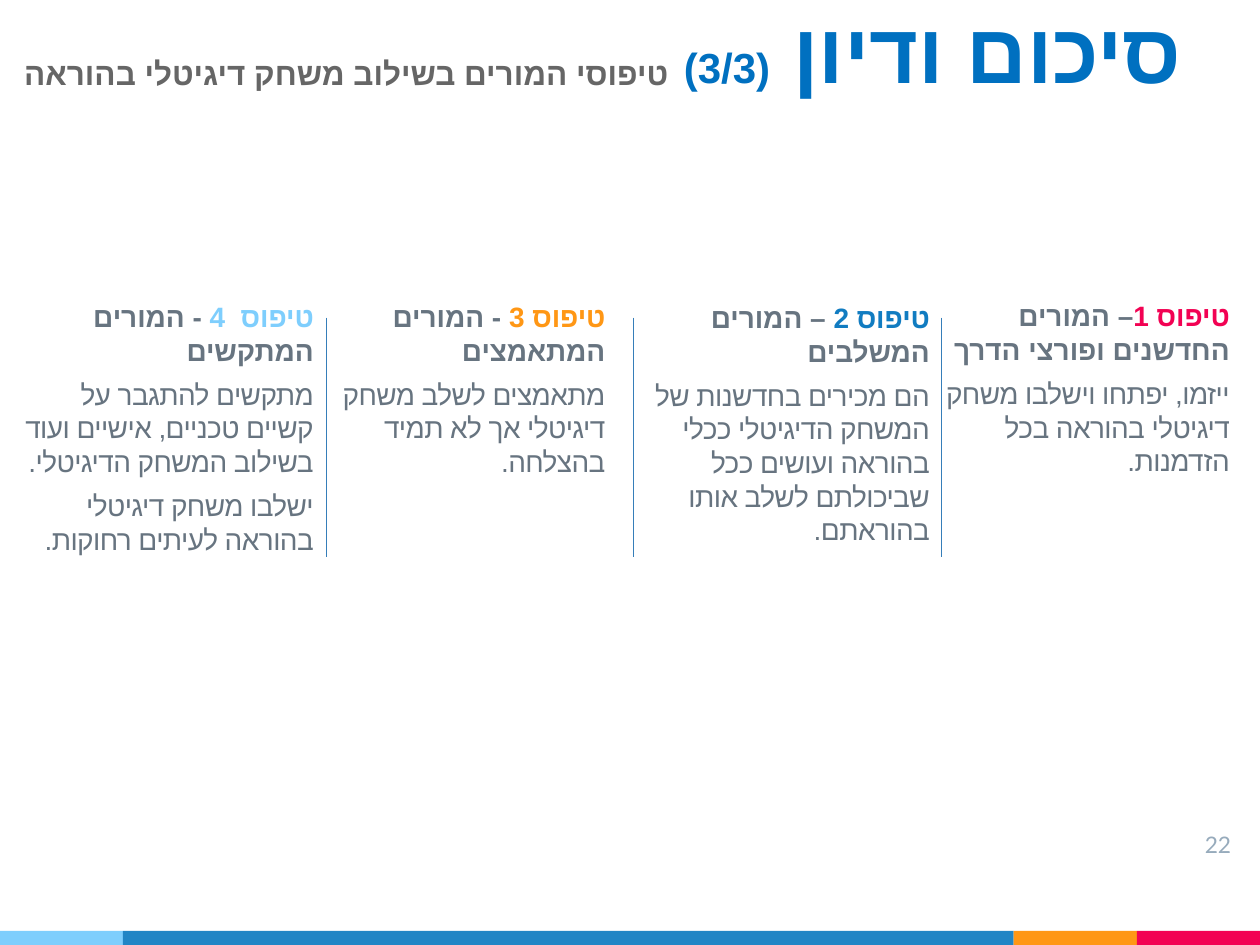
from typing import NamedTuple

from lxml.etree import SubElement
from pptx import Presentation
from pptx.dml.color import RGBColor
from pptx.enum.shapes import MSO_CONNECTOR, MSO_SHAPE
from pptx.enum.text import MSO_ANCHOR, PP_ALIGN
from pptx.oxml.ns import qn
from pptx.util import Pt

BLUE, GREY, SLATE = "0070C0", "666666", "677480"
SKY, ORANGE, RED = "7ECEFD", "FF9715", "F20253"
DETAIL_TRACKING = -0.3  # keeps the details inside their columns


class Stripe(NamedTuple):
    left: float
    width: float
    color: str


class TeacherType(NamedTuple):
    left: float
    top: float
    label: str
    color: str
    heading: str
    details: list[str]


STRIPES = [
    Stripe(0, 70.3, SKY),
    Stripe(70.3, 509, "2185C5"),
    Stripe(579.3, 70.4, ORANGE),
    Stripe(649.7, 70.3, RED),
]

TEACHER_TYPES = [
    TeacherType(523.4, 163.6, "טיפוס 1", RED, "– המורים החדשנים ופורצי הדרך ",
                ["ייזמו, יפתחו וישלבו משחק דיגיטלי בהוראה בכל הזדמנות."]),
    TeacherType(352, 164.6, "טיפוס 2 ", "117CC1", "– המורים המשלבים",
                ["הם מכירים בחדשנות של המשחק הדיגיטלי ככלי בהוראה ועושים ככל "
                 "שביכולתם לשלב אותו בהוראתם."]),
    TeacherType(166.6, 164, "טיפוס 3 ", ORANGE, "- המורים המתאמצים",
                ["מתאמצים לשלב משחק דיגיטלי אך לא תמיד בהצלחה."]),
    TeacherType(0, 164, "טיפוס  4 ", SKY, "- המורים המתקשים",
                ["מתקשים להתגבר על קשיים טכניים, אישיים ועוד בשילוב המשחק הדיגיטלי.",
                 "ישלבו משחק דיגיטלי בהוראה לעיתים רחוקות."]),
]


def rgb(color: str) -> RGBColor:
    return RGBColor.from_string(color)


def add_frame(slide, left: float, top: float, width: float, height: float,
              inset_x: float = 7.2, inset_y: float = 7.2):
    """Add a wrapping text box and return its text frame."""
    frame = slide.shapes.add_textbox(Pt(left), Pt(top), Pt(width), Pt(height)).text_frame
    frame.word_wrap = True
    frame.margin_left = frame.margin_right = Pt(inset_x)
    frame.margin_top = frame.margin_bottom = Pt(inset_y)
    return frame


def set_font(paragraph, size: float, color: str | None = None, bold: bool = False,
             name: str = "Arial") -> None:
    """Set the paragraph font for both Latin and Hebrew letters."""
    font = paragraph.font
    font.size, font.bold, font.name = Pt(size), bold, name
    if color:
        font.color.rgb = rgb(color)
    defaults = paragraph._p.pPr.find(qn("a:defRPr"))
    SubElement(defaults, qn("a:cs")).set("typeface", name)


def add_run(paragraph, text: str, color: str | None = None, size: float | None = None,
            tracking: float = 0) -> None:
    run = paragraph.add_run()
    run.text = text
    if color:
        run.font.color.rgb = rgb(color)
    if size:
        run.font.size = Pt(size)
    if tracking:
        run._r.get_or_add_rPr().set("spc", str(round(tracking * 100)))


def set_hebrew_layout(paragraph) -> None:
    paragraph.alignment = PP_ALIGN.RIGHT
    paragraph.space_before = Pt(6)
    paragraph._p.get_or_add_pPr().set("rtl", "1")


def add_teacher_type(slide, teacher: TeacherType) -> None:
    frame = add_frame(slide, teacher.left, teacher.top, 186.5, 146)
    heading = frame.paragraphs[0]
    set_hebrew_layout(heading)
    set_font(heading, 16, bold=True)
    add_run(heading, teacher.label, teacher.color)
    add_run(heading, teacher.heading, SLATE)
    for detail in teacher.details:
        description = frame.add_paragraph()
        set_hebrew_layout(description)
        set_font(description, 16, SLATE)
        add_run(description, detail, tracking=DETAIL_TRACKING)


def add_stripe(slide, stripe: Stripe) -> None:
    bar = slide.shapes.add_shape(MSO_SHAPE.RECTANGLE, Pt(stripe.left), Pt(532),
                                 Pt(stripe.width), Pt(8))
    bar.shadow.inherit = False
    bar.fill.solid()
    bar.fill.fore_color.rgb = rgb(stripe.color)
    bar.line.fill.background()


def add_divider(slide, x: float) -> None:
    divider = slide.shapes.add_connector(MSO_CONNECTOR.STRAIGHT, Pt(x), Pt(181.5),
                                         Pt(x), Pt(318.2))
    divider.line.color.rgb = rgb("367EB9")
    divider.line.width = Pt(0.75)
    SubElement(divider._element.spPr, qn("a:effectLst"))


def add_headings(slide) -> None:
    title_frame = add_frame(slide, 88.6, -25.2, 600.4, 90)
    title_frame.vertical_anchor = MSO_ANCHOR.BOTTOM
    title = title_frame.paragraphs[0]
    title.alignment = PP_ALIGN.RIGHT
    set_font(title, 48, BLUE, bold=True)
    add_run(title, "סיכום ודיון ")
    add_run(title, "(3/3) ", size=24)

    subtitle = add_frame(slide, 1.4, 27.4, 393.2, 29, inset_y=3.6).paragraphs[0]
    subtitle.alignment = PP_ALIGN.CENTER
    set_font(subtitle, 18, GREY, bold=True)
    add_run(subtitle, "טיפוסי המורים בשילוב משחק דיגיטלי בהוראה")


def add_page_number(slide) -> None:
    number = add_frame(slide, 667.4, 467.3, 43.2, 33).paragraphs[0]
    number.alignment = PP_ALIGN.RIGHT
    set_font(number, 13, "97ABBC", name="Lato")
    add_run(number, "22")


def main() -> None:
    deck = Presentation()
    deck.slide_width, deck.slide_height = Pt(720), Pt(540)
    slide = deck.slides.add_slide(deck.slide_layouts[6])
    for stripe in STRIPES:
        add_stripe(slide, stripe)
    add_page_number(slide)
    add_headings(slide)
    for teacher in TEACHER_TYPES:
        add_teacher_type(slide, teacher)
    for index in range(3):
        add_divider(slide, 186.5 + index * 175.7)
    deck.save("out.pptx")


if __name__ == "__main__":
    main()
